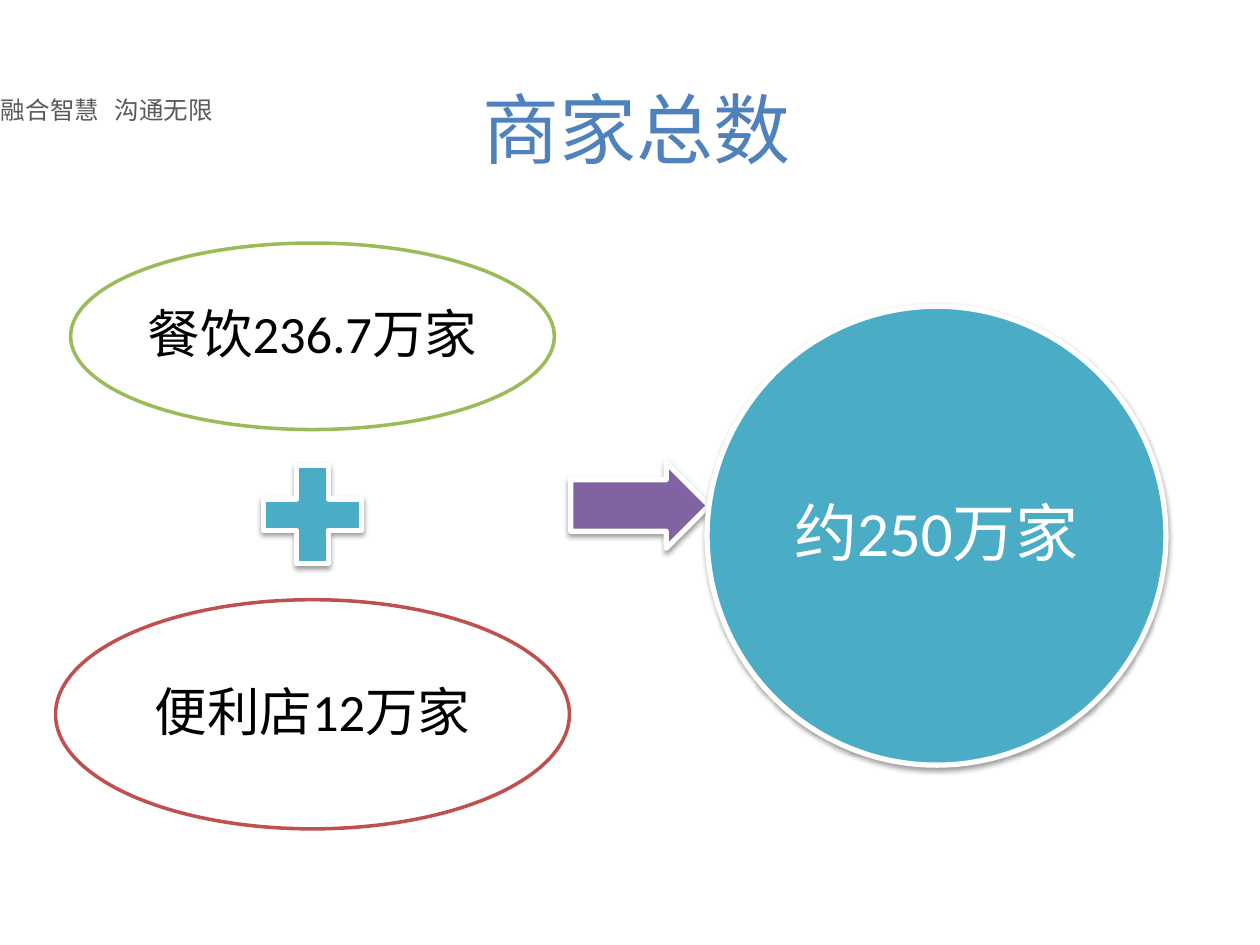
from lxml import etree
from pptx import Presentation
from pptx.dml.color import RGBColor
from pptx.enum import shapes, text
from pptx.oxml.ns import qn
from pptx.util import Cm, Pt

COLORS = {
    "white": "FFFFFF", "black": "000000", "grey": "595959", "blue": "4F81BD",
    "green": "9BBB59", "red": "C0504D", "teal": "4BACC6", "purple": "8064A2",
}
CJK = "Noto Sans CJK SC"
TITLE = "商家总数"
MOTTO = "融合智慧\t沟通无限"

SHAPE = shapes.MSO_SHAPE
ADDENDS = [
    dict(kind=SHAPE.OVAL, size=(9.75, 3.76), fill="white", line="green",
         label="餐饮236.7万家", ink="black", points=30),
    dict(kind=SHAPE.MATH_PLUS, size=(2.69, 2.69), fill="teal"),
    dict(kind=SHAPE.OVAL, size=(10.36, 4.62), fill="white", line="red",
         label="便利店12万家", ink="black", points=30),
]
ARROW = dict(kind=SHAPE.RIGHT_ARROW, size=(2.79, 1.73), fill="purple")
TOTAL = dict(kind=SHAPE.OVAL, size=(9.25, 9.25), fill="teal",
             label="约250万家", ink="white", points=36, inset=0.13)
COLUMN_CENTER, COLUMN_TOP, COLUMN_GAP = 6.3, 4.9, 0.37


def rgb(name):
    return RGBColor.from_string(COLORS[name])


def add_run(paragraph, words, points, color, latin, asian=CJK):
    run = paragraph.add_run()
    run.text = words
    run.font.size = Pt(points)
    run.font.name = latin
    run.font.color.rgb = rgb(color)
    etree.SubElement(run.font._element, qn("a:ea"), typeface=asian)


def cast_shadow(shape):
    effects = shape._element.spPr.find(qn("a:effectLst"))
    shadow = etree.SubElement(
        effects, qn("a:outerShdw"), blurRad=str(Pt(3.1)), dist=str(Pt(1.6)),
        dir="5400000", algn="ctr", rotWithShape="0")
    shade = etree.SubElement(shadow, qn("a:srgbClr"), val=COLORS["black"])
    etree.SubElement(shade, qn("a:alpha"), val="38000")


def add_part(slide, center_x, center_y, kind, size, fill, line=None,
             label=None, ink=None, points=None, inset=0.1):
    width, height = size
    part = slide.shapes.add_shape(
        kind, Cm(center_x - width / 2), Cm(center_y - height / 2),
        Cm(width), Cm(height))
    part.fill.solid()
    part.fill.fore_color.rgb = rgb(fill)
    part.line.color.rgb = rgb(line or "white")
    part.line.width = Pt(2 if line else 3)
    part.shadow.inherit = False
    if not line:
        cast_shadow(part)
    if label:
        frame = part.text_frame
        frame.word_wrap = True
        frame.vertical_anchor = text.MSO_ANCHOR.MIDDLE
        frame.margin_left = frame.margin_right = Cm(inset)
        frame.margin_top = frame.margin_bottom = Cm(inset)
        paragraph = frame.paragraphs[0]
        paragraph.alignment = text.PP_ALIGN.CENTER
        paragraph.line_spacing = 0.9
        add_run(paragraph, label, points, ink, "Calibri")
    return part


def add_motto(slide):
    motto = slide.shapes.add_textbox(Cm(-0.23), Cm(1.8), Cm(5.36), Cm(0.86))
    motto.text_frame.word_wrap = True
    paragraph = motto.text_frame.paragraphs[0]
    tabs = etree.SubElement(paragraph._p.get_or_add_pPr(), qn("a:tabLst"))
    etree.SubElement(tabs, qn("a:tab"), pos=str(Cm(2.29)), algn="l")
    font = "Noto Sans CJK JP"
    add_run(paragraph, MOTTO, 14, "grey", font, font)


def add_title(slide):
    title = slide.shapes.title
    title.left, title.top = Cm(1.4), Cm(0.99)
    title.width, title.height = Cm(22.86), Cm(3.18)
    title.text_frame.vertical_anchor = text.MSO_ANCHOR.MIDDLE
    paragraph = title.text_frame.paragraphs[0]
    paragraph.alignment = text.PP_ALIGN.CENTER
    add_run(paragraph, TITLE, 44, "blue", CJK)


def main():
    deck = Presentation()
    deck.slide_width, deck.slide_height = Cm(25.4), Cm(19.05)
    slide = deck.slides.add_slide(deck.slide_layouts[5])
    add_motto(slide)
    add_title(slide)
    top = COLUMN_TOP
    for addend in ADDENDS:
        height = addend["size"][1]
        add_part(slide, COLUMN_CENTER, top + height / 2, **addend)
        top += height + COLUMN_GAP
    arrow = add_part(slide, 12.9, 10.19, **ARROW)
    arrow.adjustments[0] = 0.6
    add_part(slide, 18.88, 10.8, **TOTAL)
    deck.save("out.pptx")


if __name__ == "__main__":
    main()
